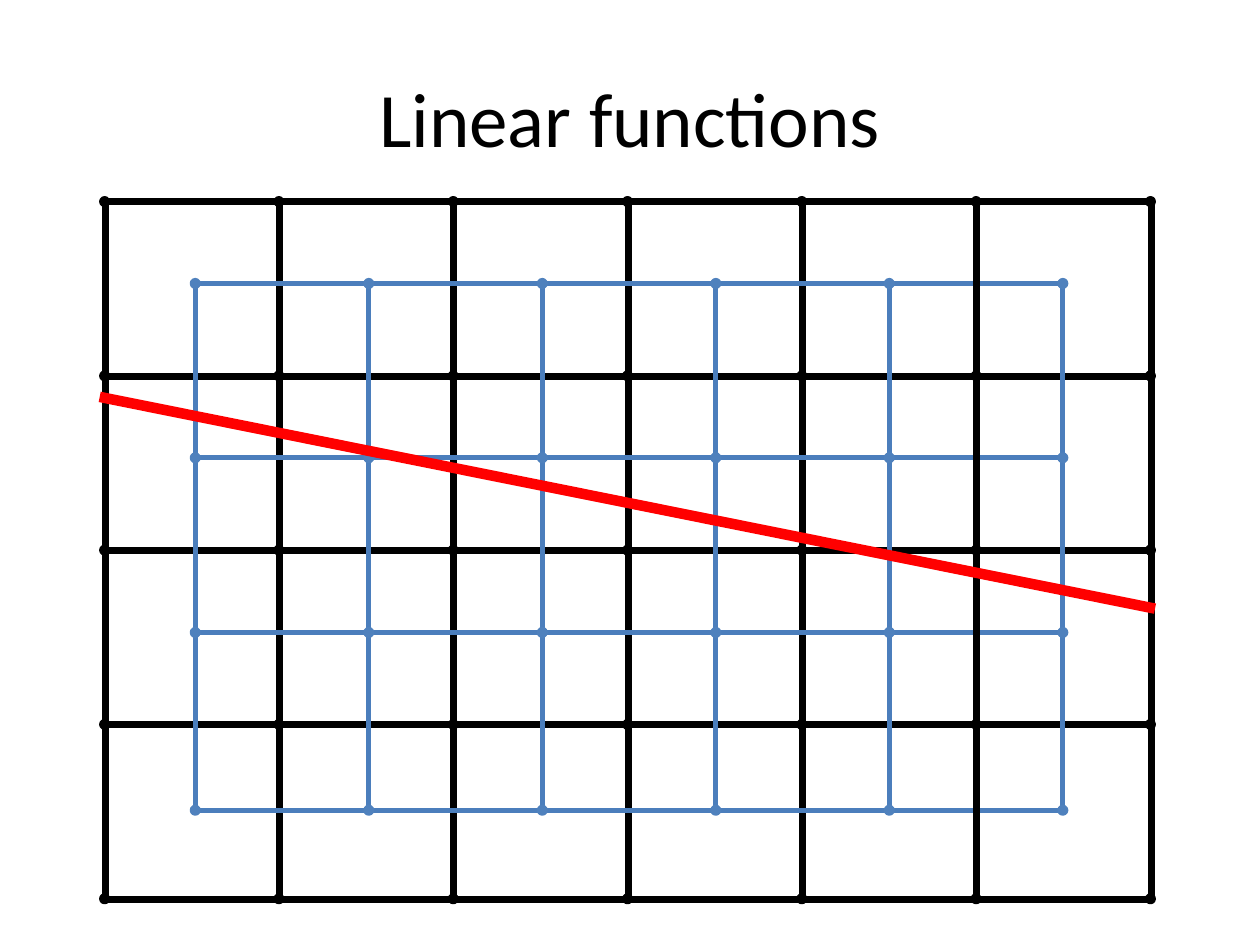
from lxml import etree
from pptx import Presentation
from pptx.dml.color import RGBColor
from pptx.enum.shapes import MSO_CONNECTOR as Connector, MSO_SHAPE as Shape
from pptx.enum.text import MSO_ANCHOR as Anchor, PP_ALIGN as Align
from pptx.oxml.ns import qn
from pptx.util import Pt

BLACK, BLUE, LINE_BLUE, RED = "000000", "4F81BD", "4B7EBC", "FF0000"
DOT_SIZE = 4.3

# Black cells: six columns by four rows
CELL_LEFT, CELL_TOP = 59.2, 114.4
CELL_PITCH, CELL_SIZE = 99.6, 101.5
CELL_COLUMNS, CELL_ROWS = 6, 4
CORNER_LEFT, CORNER_TOP = 59.8, 115.2

# Blue grid joining the cell centres
BLUE_COLUMNS = [111.6 + 99.15 * column for column in range(6)]
BLUE_ROWS = [162, 261.6, 361.4, 463]


def color(value):
    return RGBColor.from_string(value)


def add_title(slide, text):
    title = slide.shapes.title
    title.left, title.top, title.width, title.height = Pt(36), Pt(21.6), Pt(648), Pt(90)
    frame = title.text_frame
    frame.text = text
    frame.vertical_anchor = Anchor.MIDDLE
    para = frame.paragraphs[0]
    para.alignment = Align.CENTER
    font = para.runs[0].font
    font.name, font.size = "Calibri", Pt(44)
    font.color.rgb = color(BLACK)


def add_outlined(slide, kind, left, top, size, fill):
    shape = slide.shapes.add_shape(kind, Pt(left), Pt(top), Pt(size), Pt(size))
    shape.shadow.inherit = False
    shape.fill.solid()
    shape.fill.fore_color.rgb = color(fill)
    shape.line.color.rgb = color(fill)
    shape.line.width = Pt(2)
    return shape


def add_dot(slide, x, y, fill):
    add_outlined(slide, Shape.OVAL, x - DOT_SIZE / 2, y - DOT_SIZE / 2, DOT_SIZE, fill)


def add_line(slide, start, end, stroke, width):
    line = slide.shapes.add_connector(
        Connector.STRAIGHT, Pt(start[0]), Pt(start[1]), Pt(end[0]), Pt(end[1]))
    line.line.color.rgb = color(stroke)
    line.line.width = Pt(width)
    etree.SubElement(line._element.spPr, qn("a:effectLst"))


def add_cells(slide, columns):
    for column in columns:
        for row in range(CELL_ROWS):
            cell = add_outlined(slide, Shape.FRAME, CELL_LEFT + column * CELL_PITCH,
                                CELL_TOP + row * CELL_PITCH, CELL_SIZE, BLACK)
            cell.adjustments[0] = 0.018


def add_corners(slide, columns):
    for column in columns:
        for row in range(CELL_ROWS + 1):
            add_dot(slide, CORNER_LEFT + column * CELL_PITCH,
                    CORNER_TOP + row * CELL_PITCH, BLACK)


def add_blue_rows(slide):
    for y in BLUE_ROWS:
        add_line(slide, (BLUE_COLUMNS[0], y), (BLUE_COLUMNS[-1], y), LINE_BLUE, 3)


def add_blue_columns(slide, columns):
    for x in columns:
        add_line(slide, (x, BLUE_ROWS[-1]), (x, BLUE_ROWS[0]), LINE_BLUE, 3)
        for y in BLUE_ROWS:
            add_dot(slide, x, y, BLUE)


def main():
    deck = Presentation()
    deck.slide_width, deck.slide_height = Pt(720), Pt(540)
    slide = deck.slides.add_slide(deck.slide_layouts[5])
    add_title(slide, "Linear functions")

    # Main part of both grids
    last = CELL_COLUMNS - 1
    add_cells(slide, range(last))
    add_corners(slide, range(last + 1))
    add_blue_rows(slide)
    add_blue_columns(slide, BLUE_COLUMNS[:-1])

    # The last black column lies over the blue rows
    add_cells(slide, [last])
    add_corners(slide, [CELL_COLUMNS])
    add_blue_columns(slide, BLUE_COLUMNS[-1:])

    # The linear function
    add_line(slide, (57, 226.8), (660, 347.8), RED, 6)
    deck.save("out.pptx")


if __name__ == "__main__":
    main()
